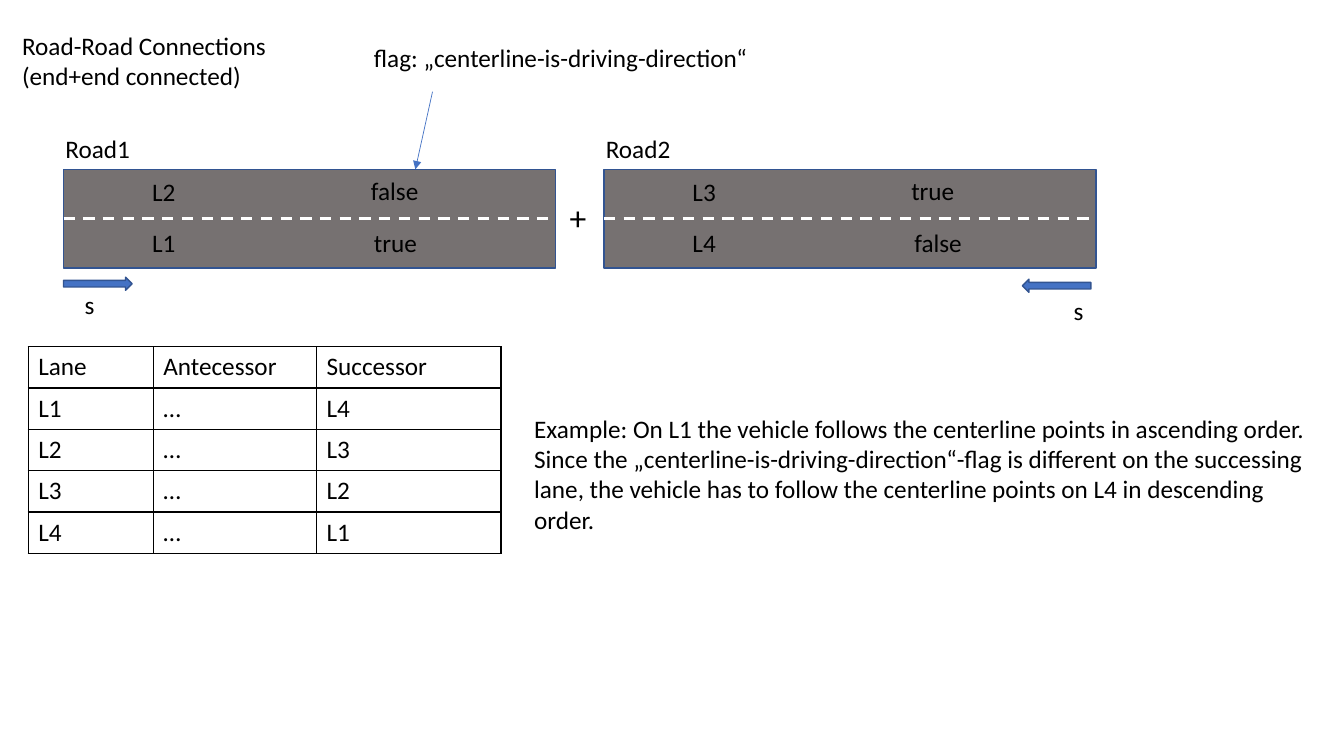
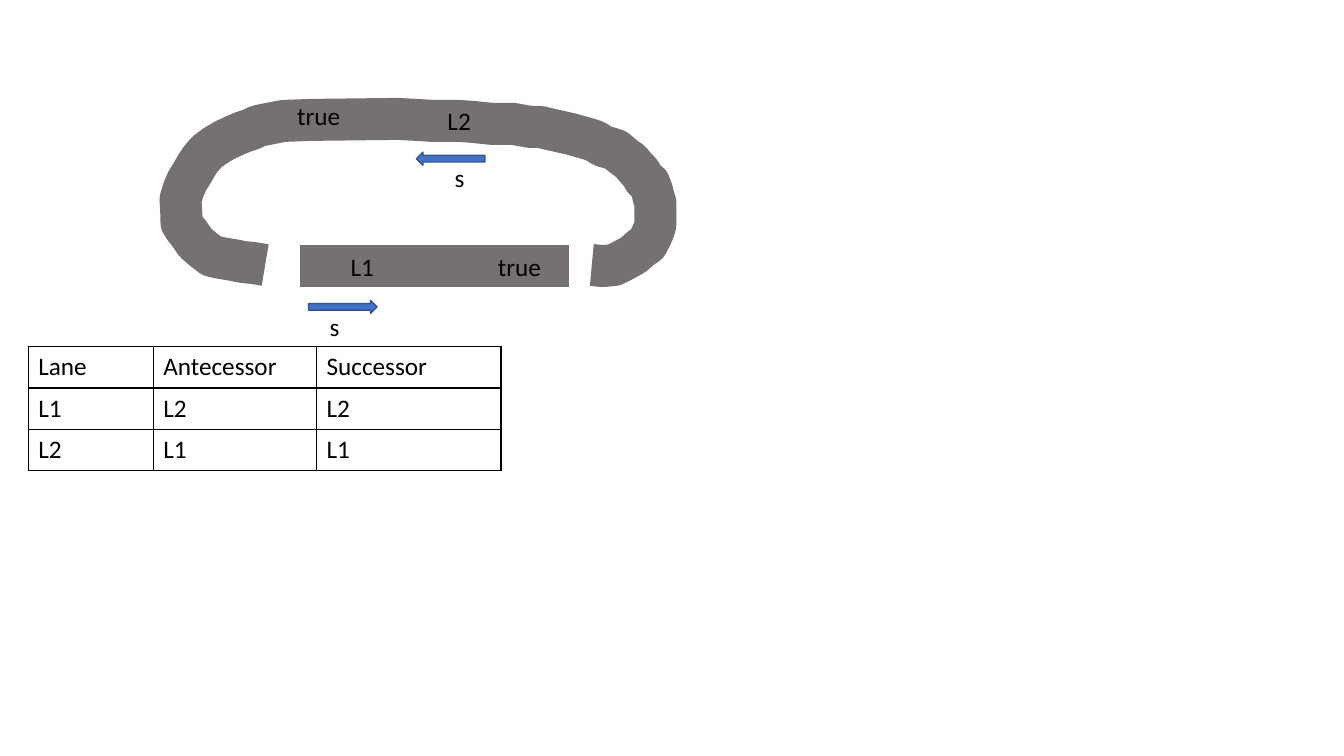
from dataclasses import dataclass

from lxml.etree import SubElement
from pptx import Presentation
from pptx.dml.color import RGBColor
from pptx.enum.dml import MSO_LINE
from pptx.enum.shapes import MSO_CONNECTOR, MSO_SHAPE
from pptx.enum.text import MSO_AUTO_SIZE
from pptx.oxml.ns import qn
from pptx.util import Emu, Pt

PX = 9144


@dataclass(frozen=True)
class Theme:
    font: str = "Calibri"
    body: int = 18
    plus: int = 24
    ink: str = "000000"
    paper: str = "FFFFFF"
    asphalt: str = "767171"
    accent: str = "4472C4"
    outline: str = "325491"
    thin: float = 0.5
    border: float = 1
    marking: float = 2
    lane: float = 30


THEME = Theme()
SLIDE_SIZE = (1333, 750)
ROAD_SIZE = (488, 98)
ROAD_TOP = 168
ARROW_SIZE = (68, 13)
LABEL_HEIGHT = 40
LABEL_WIDTHS = {"s": 30, "L1": 44, "L2": 44, "L3": 44, "L4": 44,
                "true": 63, "false": 68, "Road1": 85, "Road2": 85}
TABLE_ORIGIN = (28, 344)
COLUMN_WIDTHS = (124, 162, 183)
ROW_HEIGHT = 41
HEADER = ("Lane", "Antecessor", "Successor")

HEADING = ["Road-Road Connections", "(end+end connected)"]
FLAG_NOTE = "flag: „centerline-is-driving-direction“"
EXAMPLE = (
    "Example: On L1 the vehicle follows the centerline points in ascending order. "
    "Since the „centerline-is-driving-direction“-flag is different on the successing "
    "lane, the vehicle has to follow the centerline points on L4 in descending order."
)
ROADS = [
    {"name": "Road1", "left": 63, "lanes": [("L2", "false"), ("L1", "true")],
     "direction": ("right", (63, 275), (74, 282))},
    {"name": "Road2", "left": 599, "lanes": [("L3", "true"), ("L4", "false")],
     "direction": ("left", (1014, 277), (1055, 288))},
]
ROAD_LINKS = [("L1", "…", "L4"), ("L2", "…", "L3"), ("L3", "…", "L2"), ("L4", "…", "L1")]

LOOP_LINKS = [("L1", "L2", "L2"), ("L2", "L1", "L1")]
LOOP_DIRECTIONS = [("right", (306, 298), (317, 304)), ("left", (413, 151), (441, 156))]
LOOP_LABELS = [("L1", 338, 244), ("L2", 434, 100), ("true", 484, 244), ("true", 285, 95)]
STRAIGHT_LANE = ((298, 264), (564, 264))
CURVED_LANE = [
    (587, 263), (598, 264), (609, 263), (617, 259), (628, 253), (636, 246), (642, 242),
    (646, 234), (649, 227), (650, 223), (650, 201), (648, 195), (647, 190), (644, 182),
    (639, 178), (635, 171), (631, 167), (625, 160), (618, 155), (611, 149), (605, 147),
    (598, 145), (590, 140), (584, 138), (577, 136), (566, 133), (553, 130), (544, 128),
    (536, 126), (526, 126), (509, 123), (488, 123), (469, 121), (455, 120), (428, 120),
    (413, 119), (394, 118), (309, 119), (282, 120), (276, 121), (256, 125), (250, 128),
    (241, 131), (234, 134), (223, 139), (213, 145), (205, 151), (199, 158), (195, 164),
    (191, 171), (186, 179), (182, 188), (179, 198), (180, 215), (180, 221), (183, 226),
    (187, 231), (194, 241), (201, 247), (210, 254), (219, 256), (231, 258), (241, 260),
    (251, 261), (263, 263),
]


def px(*lengths):
    return [Emu(length * PX) for length in lengths]


def rgb(code):
    return RGBColor.from_string(code)


def write(paragraph, text, size=THEME.body):
    run = paragraph.add_run()
    run.text = text
    run.font.name = THEME.font
    run.font.size = Pt(size)
    run.font.color.rgb = rgb(THEME.ink)


def add_text(slide, lines, left, top, width, height=LABEL_HEIGHT, size=THEME.body, wrap=False):
    frame = slide.shapes.add_textbox(*px(left, top, width, height)).text_frame
    frame.word_wrap = wrap
    frame.auto_size = MSO_AUTO_SIZE.SHAPE_TO_FIT_TEXT
    paragraph = frame.paragraphs[0]
    for index, line in enumerate(lines):
        if index:
            paragraph.add_line_break()
        write(paragraph, line, size)


def add_label(slide, text, left, top):
    add_text(slide, [text], left, top, LABEL_WIDTHS[text])


def add_block(slide, preset, left, top, size, fill):
    block = slide.shapes.add_shape(preset, *px(left, top, *size))
    block.shadow.inherit = False
    block.fill.solid()
    block.fill.fore_color.rgb = rgb(fill)
    block.line.color.rgb = rgb(THEME.outline)
    block.line.width = Pt(THEME.border)


def add_line(slide, start, end, color, width, dash=None, arrowhead=False):
    connector = slide.shapes.add_connector(MSO_CONNECTOR.STRAIGHT, *px(*start, *end))
    connector.line.color.rgb = rgb(color)
    connector.line.width = Pt(width)
    if dash:
        connector.line.dash_style = dash
    properties = connector._element.spPr
    if arrowhead:
        SubElement(properties.find(qn("a:ln")), qn("a:tailEnd"), type="triangle")
    SubElement(properties, qn("a:effectLst"))


def add_direction(slide, heading, arrow_at, label_at):
    preset = MSO_SHAPE.RIGHT_ARROW if heading == "right" else MSO_SHAPE.LEFT_ARROW
    add_block(slide, preset, *arrow_at, ARROW_SIZE, THEME.accent)
    add_label(slide, "s", *label_at)


def add_road(slide, road):
    left = road["left"]
    width, height = ROAD_SIZE
    middle = ROAD_TOP + height // 2
    add_block(slide, MSO_SHAPE.RECTANGLE, left, ROAD_TOP, ROAD_SIZE, THEME.asphalt)
    add_line(slide, (left, middle), (left + width, middle),
             THEME.paper, THEME.marking, MSO_LINE.DASH)
    for index, (lane, flag) in enumerate(road["lanes"]):
        add_label(slide, lane, left + 78, 170 + 51 * index)
        add_label(slide, flag, left + 295 + 3 * index, 169 + 52 * index)
    add_label(slide, road["name"], left - 8, 127)
    add_direction(slide, *road["direction"])


def style_cell(cell):
    properties = cell._tc.get_or_add_tcPr()
    for side in ("lnL", "lnR", "lnT", "lnB"):
        edge = SubElement(properties, qn(f"a:{side}"), w=str(Pt(THEME.border)))
        fill = SubElement(edge, qn("a:solidFill"))
        SubElement(fill, qn("a:srgbClr"), val=THEME.ink)
    cell.fill.background()


def add_links(slide, links):
    rows = [HEADER, *links]
    size = (sum(COLUMN_WIDTHS), ROW_HEIGHT * len(rows))
    table = slide.shapes.add_table(len(rows), len(HEADER), *px(*TABLE_ORIGIN, *size)).table
    table.first_row = False
    table.horz_banding = False
    for column, width in zip(table.columns, px(*COLUMN_WIDTHS)):
        column.width = width
    for row, texts in zip(table.rows, rows):
        row.height = Emu(ROW_HEIGHT * PX)
        for cell, text in zip(row.cells, texts):
            write(cell.text_frame.paragraphs[0], text)
            style_cell(cell)


def add_curve(slide, points):
    builder = slide.shapes.build_freeform(*points[0], scale=PX)
    builder.add_line_segments(points[1:], close=False)
    curve = builder.convert_to_shape()
    curve.shadow.inherit = False
    curve.fill.background()
    curve.line.color.rgb = rgb(THEME.asphalt)
    curve.line.width = Pt(THEME.lane)


def build_connections(slide):
    add_text(slide, HEADING, 12, 25, 275, 71, wrap=True)
    for road in ROADS:
        add_road(slide, road)
    add_text(slide, ["+"], 555, 190, 41, 50, THEME.plus, wrap=True)
    add_links(slide, ROAD_LINKS)
    add_line(slide, (429, 91), (412, 168), THEME.accent, THEME.thin, arrowhead=True)
    add_text(slide, [FLAG_NOTE], 361, 37, 395)
    add_text(slide, [EXAMPLE], 520, 405, 794, 131, wrap=True)


def build_loop(slide):
    add_line(slide, *STRAIGHT_LANE, THEME.asphalt, THEME.lane)
    add_curve(slide, CURVED_LANE)
    for direction in LOOP_DIRECTIONS:
        add_direction(slide, *direction)
    for label in LOOP_LABELS:
        add_label(slide, *label)
    add_links(slide, LOOP_LINKS)


def main():
    deck = Presentation()
    deck.slide_width, deck.slide_height = px(*SLIDE_SIZE)
    for build in (build_connections, build_loop):
        build(deck.slides.add_slide(deck.slide_layouts[6]))
    deck.save("out.pptx")


if __name__ == "__main__":
    main()
